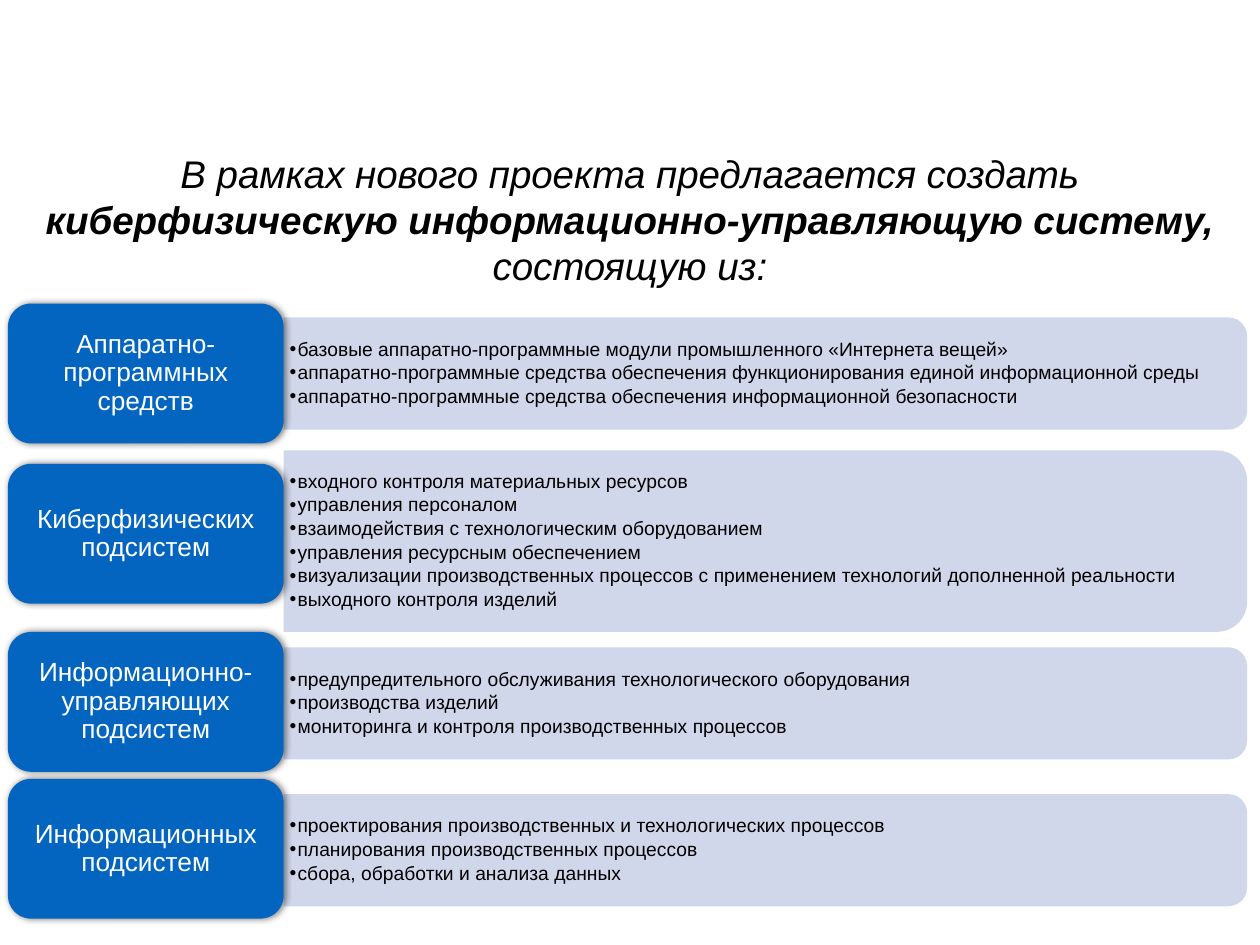
import pptx
import pptx.util
import pptx.dml.color
import pptx.enum.shapes
import pptx.enum.text
import pptx.oxml
import pptx.oxml.ns

Cm, Pt = pptx.util.Cm, pptx.util.Pt
SHAPE = pptx.enum.shapes.MSO_SHAPE
ALIGN = pptx.enum.text.PP_ALIGN
NS = pptx.oxml.ns.nsdecls("a")
BLUE, PALE, BLACK, WHITE = "0365C0", "CCD3E8", "000000", "FFFFFF"
EDGE, SPLIT = 0.16, 5.72
ROWS = [
    (7.53, 7.53, 2.26, "Аппаратно-программных средств", [
        "базовые аппаратно-программные модули промышленного «Интернета вещей»",
        "аппаратно-программные средства обеспечения функционирования единой информационной среды",
        "аппаратно-программные средства обеспечения информационной безопасности"]),
    (10.76, 10.91, 3.66, "Киберфизических подсистем", [
        "входного контроля материальных ресурсов",
        "управления персоналом",
        "взаимодействия с технологическим оборудованием",
        "управления ресурсным обеспечением",
        "визуализации производственных процессов с применением технологий дополненной реальности",
        "выходного контроля изделий"]),
    (14.15, 14.18, 2.26, "Информационно-управляющих подсистем", [
        "предупредительного обслуживания технологического оборудования",
        "производства изделий",
        "мониторинга и контроля производственных процессов"]),
    (17.11, 17.14, 2.26, "Информационных подсистем", [
        "проектирования производственных и технологических процессов",
        "планирования производственных процессов",
        "сбора, обработки и анализа данных"]),
]


def hue(code):
    """Turn a hex string into a colour."""
    return pptx.dml.color.RGBColor.from_string(code)


def write(shape, paras, size, color, align=ALIGN.LEFT, inset=(0.15, 0.15),
          space=None, after=0, italic=False, bullet=False):
    """Fill a shape with paragraphs, each a list of (text, bold) runs."""
    frame = shape.text_frame
    frame.word_wrap = True
    frame.vertical_anchor = pptx.enum.text.MSO_ANCHOR.MIDDLE
    frame.margin_left = frame.margin_right = Cm(inset[0])
    frame.margin_top = frame.margin_bottom = Cm(inset[1])
    for num, runs in enumerate(paras):
        para = frame.add_paragraph() if num else frame.paragraphs[0]
        para.alignment = align
        para.line_spacing = space
        para.space_after = Pt(after)
        if bullet:
            props = para._p.get_or_add_pPr()
            props.set("lvl", "1")
            props.set("marL", str(Cm(0.16)))
            props.set("indent", str(-Cm(0.16)))
            props.append(pptx.oxml.parse_xml(f'<a:buFont {NS} typeface="Arial"/>'))
            props.append(pptx.oxml.parse_xml(f'<a:buChar {NS} char="•"/>'))
        for text, bold in runs:
            run = para.add_run()
            run.text = text
            font = run.font
            font.name, font.size = "Arial", Pt(size)
            font.bold, font.italic = bold, italic
            font.color.rgb = hue(color)


def block(slide, kind, left, top, width, height, color):
    """Add a plain filled shape without outline or shadow."""
    shape = slide.shapes.add_shape(kind, Cm(left), Cm(top), Cm(width), Cm(height))
    shape.shadow.inherit = False
    shape.fill.solid()
    shape.fill.fore_color.rgb = hue(color)
    shape.line.fill.background()
    return shape


def panel(slide, mid, high, items):
    """Add a pale panel, rounded on its right, with a bullet list."""
    wide = 19.42
    shape = block(slide, SHAPE.ROUND_2_SAME_RECTANGLE,
                  SPLIT + (wide - high) / 2, mid - wide / 2, high, wide, PALE)
    shape.rotation = 90
    tint = shape.fill._xPr.find(".//" + pptx.oxml.ns.qn("a:srgbClr"))
    tint.append(pptx.oxml.parse_xml(f'<a:alpha {NS} val="90000"/>'))
    tall = high - 0.23
    box = slide.shapes.add_textbox(Cm(SPLIT), Cm(mid - tall / 2), Cm(19.3), Cm(tall))
    write(box, [[(item, False)] for item in items], 11, BLACK,
          inset=(0.12, 0.05), space=0.9, after=1.65, bullet=True)


def label(slide, mid, text):
    """Add a blue rounded label with a soft shadow."""
    tall = 2.82
    shape = block(slide, SHAPE.ROUNDED_RECTANGLE,
                  EDGE, mid - tall / 2, SPLIT - EDGE, tall, BLUE)
    glow = shape._element.spPr.find(pptx.oxml.ns.qn("a:effectLst"))
    glow.append(pptx.oxml.parse_xml(
        f'<a:outerShdw {NS} blurRad="{Pt(4)}" dist="{Pt(1)}" dir="0" rotWithShape="0">'
        f'<a:srgbClr val="{BLACK}"><a:alpha val="50000"/></a:srgbClr></a:outerShdw>'))
    write(shape, [[(text, False)]], 15, WHITE, align=ALIGN.CENTER,
          inset=(0.3, 0.2), space=0.9)


def main():
    """Build and save the slide."""
    deck = pptx.Presentation()
    deck.slide_width, deck.slide_height = Cm(25.4), Cm(19.05)
    slide = deck.slides.add_slide(deck.slide_layouts[6])
    head = slide.shapes.add_textbox(Cm(0), Cm(2.87), Cm(25.4), Cm(3.1))
    write(head, [[("В рамках нового проекта предлагается создать ", False),
                  ("киберфизическую информационно-управляющую систему,", True),
                  (" состоящую из:", False)]],
          22, BLACK, align=ALIGN.CENTER, italic=True)
    for spot, mid, high, name, items in ROWS:
        panel(slide, mid, high, items)
        label(slide, spot, name)
    deck.save("out.pptx")


if __name__ == "__main__":
    main()
